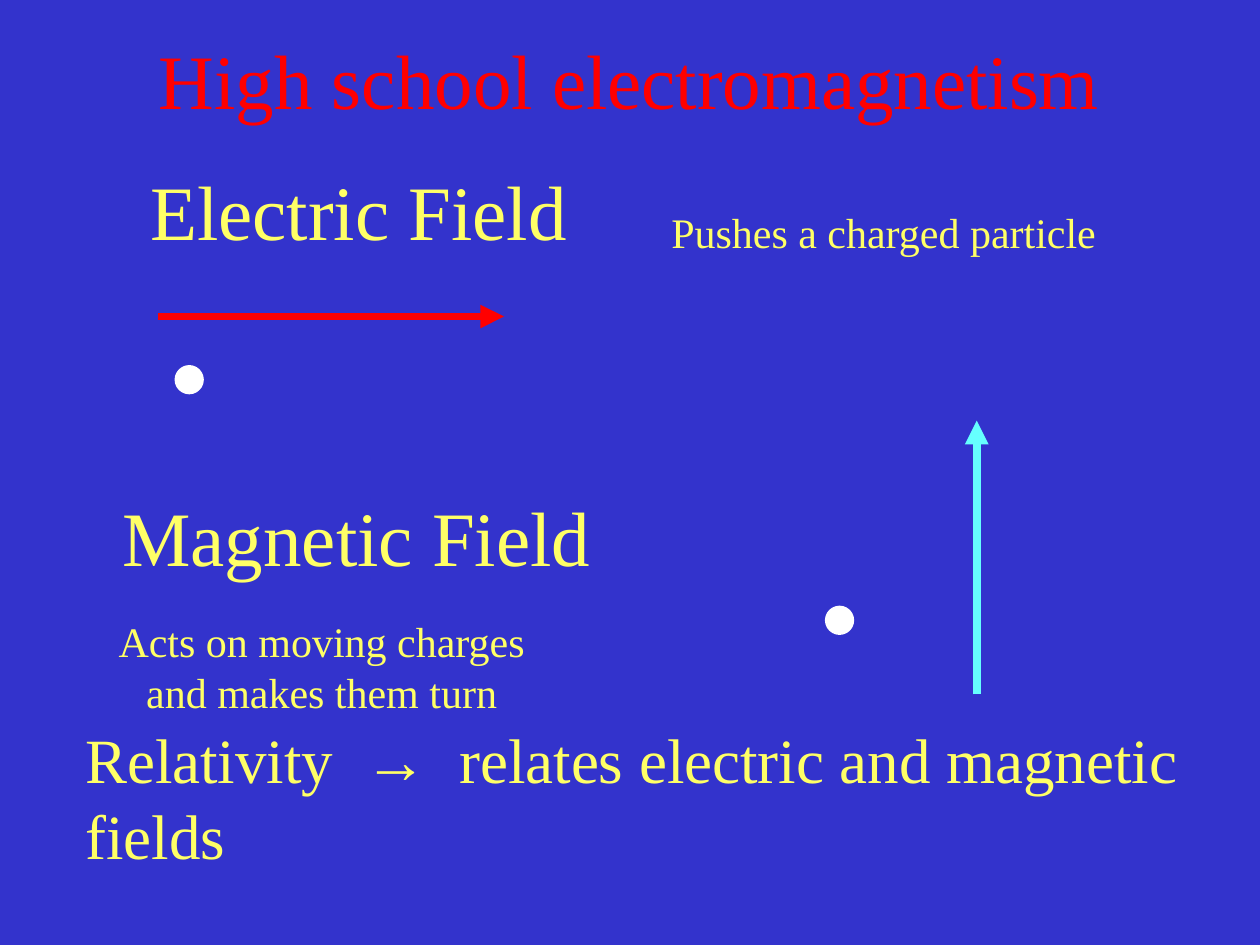
from dataclasses import dataclass

from lxml import etree
from pptx import Presentation
from pptx.dml.color import RGBColor
from pptx.enum.shapes import MSO_CONNECTOR, MSO_SHAPE
from pptx.enum.text import MSO_ANCHOR, MSO_AUTO_SIZE, PP_ALIGN
from pptx.oxml.ns import qn
from pptx.slide import Slide
from pptx.util import Cm, Pt

STRAIGHT = MSO_CONNECTOR.STRAIGHT
OVAL = MSO_SHAPE.OVAL
LEFT, CENTER = PP_ALIGN.LEFT, PP_ALIGN.CENTER
TOP, MIDDLE = MSO_ANCHOR.TOP, MSO_ANCHOR.MIDDLE
GROW = MSO_AUTO_SIZE.SHAPE_TO_FIT_TEXT
NO_FIT = MSO_AUTO_SIZE.NONE


@dataclass(frozen=True)
class Theme:
    background: RGBColor = RGBColor(0x33, 0x33, 0xCC)
    text: RGBColor = RGBColor(0xFF, 0xFF, 0x66)
    electric: RGBColor = RGBColor(0xFF, 0x00, 0x00)
    magnetic: RGBColor = RGBColor(0x66, 0xFF, 0xFF)
    charge: RGBColor = RGBColor(0xFF, 0xFF, 0xFF)
    font: str = "Times New Roman"
    heading: float = 44
    summary: float = 36
    caption: float = 24
    stroke: float = 4.5


THEME = Theme()
CHARGE_SIZE = Cm(0.43)


# Lengths in these records are centimetres.
@dataclass(frozen=True)
class Label:
    lines: tuple[str, ...]
    left: float
    top: float
    width: float
    height: float
    size: float
    color: RGBColor = THEME.text
    align: PP_ALIGN = CENTER
    anchor: MSO_ANCHOR = TOP
    wrap: bool = False
    shadow: bool = False


@dataclass(frozen=True)
class FieldArrow:
    start: tuple[float, float]
    end: tuple[float, float]
    color: RGBColor


@dataclass(frozen=True)
class Charge:
    left: float
    top: float


LABELS = (
    Label(("Electric Field",), 2.74, 3.18, 8.99, 2.13, THEME.heading),
    Label(("Magnetic Field",), 2.16, 9.75, 10.06, 2.13, THEME.heading),
    Label(("Relativity  →  relates electric and magnetic fields",),
          1.47, 14.4, 22.86, 3.33, THEME.summary, align=LEFT, wrap=True),
    Label(("Pushes a charged particle ",), 13.23, 4.04, 9.17, 1.3, THEME.caption),
    Label(("Acts on moving charges", "and makes them turn"),
          2.08, 12.29, 8.81, 2.31, THEME.caption),
    Label(("High school electromagnetism",), 1.9, 0, 21.59, 3.18, THEME.heading,
          color=THEME.electric, anchor=MIDDLE, wrap=True, shadow=True),
)
ARROWS = (
    FieldArrow((3.18, 6.38), (10.16, 6.38), THEME.electric),
    FieldArrow((19.69, 14), (19.69, 8.48), THEME.magnetic),
)
CHARGES = (Charge(3.6, 7.44), Charge(16.71, 12.29))


def add_text_shadow(span) -> None:
    properties = span.font._element
    effects = etree.Element(qn("a:effectLst"))
    shadow = etree.SubElement(effects, qn("a:outerShdw"), blurRad="38100",
                              dist="38100", dir="2700000", algn="tl")
    color = etree.SubElement(shadow, qn("a:srgbClr"), val="000000")
    etree.SubElement(color, qn("a:alpha"), val="43000")
    properties.find(qn("a:solidFill")).addnext(effects)


def add_label(page: Slide, label: Label) -> None:
    box = page.shapes.add_textbox(Cm(label.left), Cm(label.top),
                                  Cm(label.width), Cm(label.height))
    frame = box.text_frame
    frame.word_wrap = label.wrap
    frame.vertical_anchor = label.anchor
    frame.auto_size = NO_FIT if label.anchor == MIDDLE else GROW
    for index, line in enumerate(label.lines):
        para = frame.add_paragraph() if index else frame.paragraphs[0]
        para.alignment = label.align
        span = para.add_run()
        span.text = line
        span.font.name = THEME.font
        span.font.size = Pt(label.size)
        span.font.color.rgb = label.color
        if label.shadow:
            add_text_shadow(span)


def add_arrow(page: Slide, arrow: FieldArrow) -> None:
    connector = page.shapes.add_connector(
        STRAIGHT, *map(Cm, arrow.start), *map(Cm, arrow.end))
    connector.line.color.rgb = arrow.color
    connector.line.width = Pt(THEME.stroke)
    properties = connector._element.spPr
    etree.SubElement(properties.find(qn("a:ln")), qn("a:tailEnd"), type="triangle")
    etree.SubElement(properties, qn("a:effectLst"))


def add_charge(page: Slide, charge: Charge) -> None:
    dot = page.shapes.add_shape(OVAL, Cm(charge.left), Cm(charge.top),
                                CHARGE_SIZE, CHARGE_SIZE)
    dot.shadow.inherit = False
    dot.fill.solid()
    dot.fill.fore_color.rgb = THEME.charge
    dot.line.color.rgb = THEME.charge
    dot.line.width = Pt(THEME.stroke)


def main() -> None:
    deck = Presentation()
    deck.slide_width, deck.slide_height = Cm(25.4), Cm(19.05)
    page = deck.slides.add_slide(deck.slide_layouts[6])
    page.background.fill.solid()
    page.background.fill.fore_color.rgb = THEME.background

    # Fields and the particles they act on
    for arrow in ARROWS:
        add_arrow(page, arrow)
    for charge in CHARGES:
        add_charge(page, charge)

    # Title, headings and explanations
    for label in LABELS:
        add_label(page, label)

    deck.save("out.pptx")


if __name__ == "__main__":
    main()
